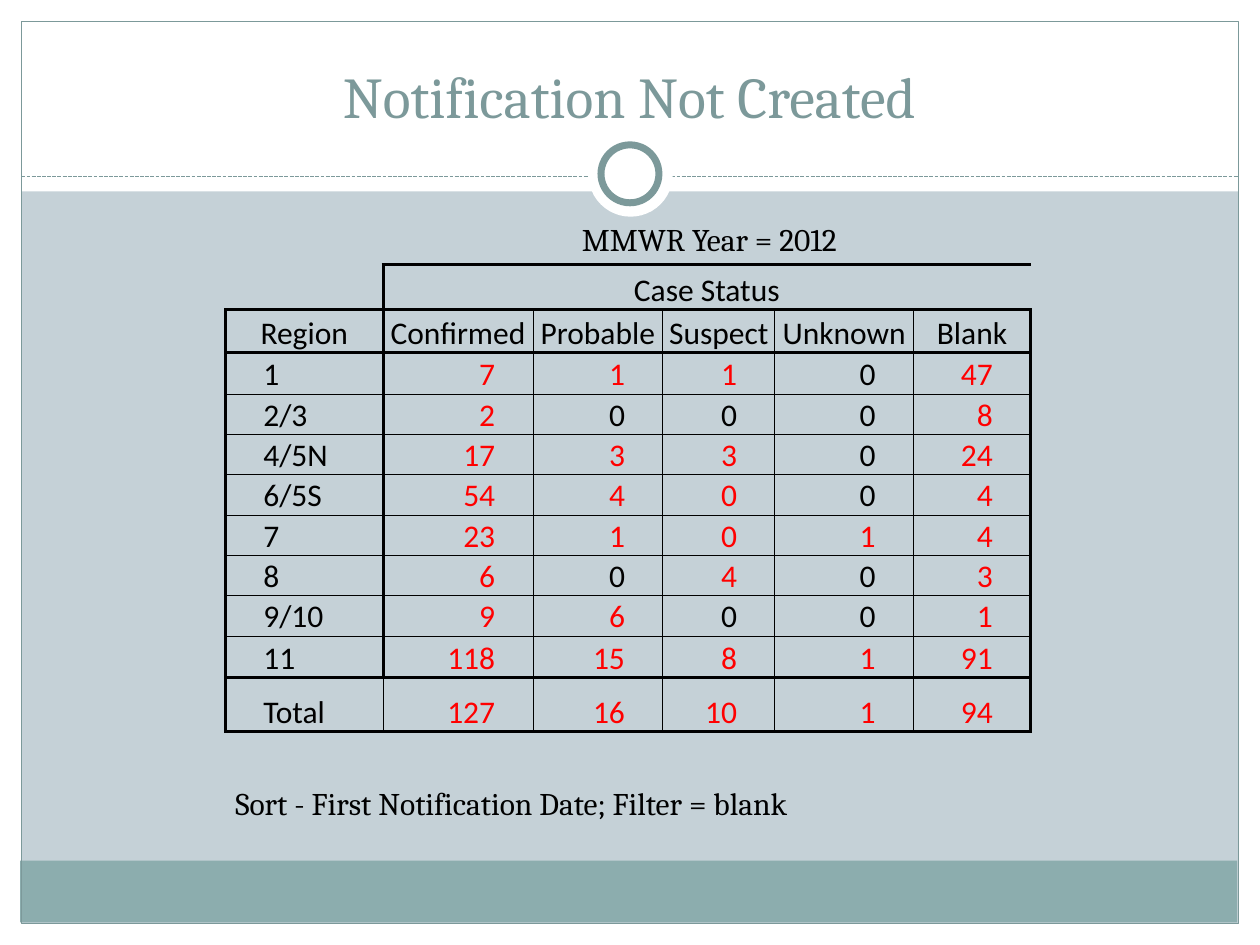
"""Build the 'Notification Not Created' slide with its region by case status table."""
from lxml import etree
from pptx import Presentation
from pptx.dml.color import RGBColor
from pptx.enum import dml, shapes, text
from pptx.oxml import ns
from pptx.util import Inches, Pt

WHITE, TEAL, BAND, BLACK, RED = "FFFFFF", "7C999A", "8CADAE", "000000", "FF0000"
THIN, HEAVY = 0.5, 2


def color(value):
    return RGBColor.from_string(value)


def set_border(cell, side, width):
    properties = cell._tc.get_or_add_tcPr()
    line = etree.SubElement(properties, ns.qn(f"a:ln{side}"), w=str(Pt(width)))
    if not width:
        etree.SubElement(line, ns.qn("a:noFill"))
        return
    fill = etree.SubElement(line, ns.qn("a:solidFill"))
    etree.SubElement(fill, ns.qn("a:srgbClr"), val=BLACK)


presentation = Presentation()
presentation.slide_width, presentation.slide_height = Inches(10), Inches(7.5)
slide = presentation.slides.add_slide(presentation.slide_layouts[6])
slide.background.fill.solid()
slide.background.fill.fore_color.rgb = color("C5D1D7")

rectangle, oval = shapes.MSO_SHAPE.RECTANGLE, shapes.MSO_SHAPE.OVAL
decorations = [
    (rectangle, (0, 7.33, 10, 0.17), WHITE, None),
    (rectangle, (0, 0, 10, 1.52), WHITE, None),
    (rectangle, (0, 0, 0.17, 7.5), WHITE, None),
    (rectangle, (9.83, 0, 0.17, 7.5), WHITE, None),
    (rectangle, (0.16, 6.83, 9.66, 0.49), BAND, None),
    (rectangle, (0.17, 0.17, 9.66, 7.16), None, 0.75),
    (oval, (4.67, 1.05, 0.67, 0.67), WHITE, None),
    (oval, (4.77, 1.15, 0.46, 0.46), WHITE, 4),
]
for preset, box, fill, line_width in decorations:
    if box[:2] == (4.67, 1.05):
        divider = slide.shapes.add_connector(
            shapes.MSO_CONNECTOR.STRAIGHT, Inches(0.17), Inches(1.4), Inches(9.83), Inches(1.4))
        divider.line.color.rgb = color(TEAL)
        divider.line.width = Pt(0.75)
        divider.line.dash_style = dml.MSO_LINE.SQUARE_DOT
        etree.SubElement(divider._element.spPr, ns.qn("a:effectLst"))
    shape = slide.shapes.add_shape(preset, *map(Inches, box))
    shape.shadow.inherit = False
    if fill:
        shape.fill.solid()
        shape.fill.fore_color.rgb = color(fill)
    else:
        shape.fill.background()
    if line_width:
        shape.line.color.rgb = color(TEAL)
        shape.line.width = Pt(line_width)
    else:
        shape.line.fill.background()

left, center, right = text.PP_ALIGN.LEFT, text.PP_ALIGN.CENTER, text.PP_ALIGN.RIGHT
top, bottom = text.MSO_ANCHOR.TOP, text.MSO_ANCHOR.BOTTOM
captions = [
    ("Notification Not Created", (0.33, 0.25, 9.33, 0.83), 33, TEAL, center, bottom),
    ("Sort - First Notification Date; Filter = blank", (1.77, 6.17, 5.57, 0.42), 18, BLACK, left, top),
    ("MMWR Year = 2012", (3.42, 1.7, 4.42, 0.4), 18, BLACK, center, top),
]
for caption, box, size, font_color, alignment, anchor in captions:
    frame = slide.shapes.add_textbox(*map(Inches, box)).text_frame
    frame.word_wrap = True
    frame.vertical_anchor = anchor
    paragraph = frame.paragraphs[0]
    paragraph.text = caption
    paragraph.alignment = alignment
    paragraph.font.name = "Cambria"
    paragraph.font.size = Pt(size)
    paragraph.font.color.rgb = color(font_color)

rows = [
    ["", "Case Status", "", "", "", ""],
    ["Region", "Confirmed", "Probable", "Suspect", "Unknown", "Blank"],
    ["1", "7", "1", "1", "0", "47"],
    ["2/3", "2", "0", "0", "0", "8"],
    ["4/5N", "17", "3", "3", "0", "24"],
    ["6/5S", "54", "4", "0", "0", "4"],
    ["7", "23", "1", "0", "1", "4"],
    ["8", "6", "0", "4", "0", "3"],
    ["9/10", "9", "6", "0", "0", "1"],
    ["11", "118", "15", "8", "1", "91"],
    ["Total", "127", "16", "10", "1", "94"],
]
red_zeros = {("6/5S", 3), ("7", 3)}
column_widths = [1.25, 1.19, 1.03, 0.89, 1.1, 0.93]
row_heights = [0.36, 0.34, 0.33] + [0.32] * 6 + [0.33, 0.43]
total_row = len(rows) - 1
heavy_rows, heavy_columns = {0, 1, 2, total_row, total_row + 1}, {0, 1, 6}

table = slide.shapes.add_table(
    len(rows), len(column_widths), Inches(1.79), Inches(2.1),
    Inches(sum(column_widths)), Inches(sum(row_heights))).table
table.first_row = table.horz_banding = False
for column, width in zip(table.columns, column_widths):
    column.width = Inches(width)
for row, height in zip(table.rows, row_heights):
    row.height = Inches(height)
table.cell(0, 1).merge(table.cell(0, 5))

for r, values in enumerate(rows):
    for c, value in enumerate(values):
        cell = table.cell(r, c)
        is_header, is_label = r < 2, c == 0
        is_red = not is_header and not is_label and (value != "0" or (values[0], c) in red_zeros)
        cell.vertical_anchor = bottom
        cell.margin_left = Inches(0.3 if is_label and not is_header else 0.01)
        cell.margin_right = Inches(0.01 if is_label or is_header else 0.3)
        cell.margin_top, cell.margin_bottom = Inches(0.01), 0
        paragraph = cell.text_frame.paragraphs[0]
        paragraph.text = value
        paragraph.alignment = center if is_header else left if is_label else right
        paragraph.font.name = "Calibri"
        paragraph.font.size = Pt(18)
        paragraph.font.color.rgb = color(RED if is_red else BLACK)

        for side, edge in (("L", c), ("R", c + 1)):
            is_heavy = edge in heavy_columns and not (r == total_row and edge == 1)
            is_open = r == 0 and edge not in (1, 6)
            set_border(cell, side, 0 if is_open else HEAVY if is_heavy else THIN)
        for side, edge in (("T", r), ("B", r + 1)):
            is_open = is_label and edge == 0
            set_border(cell, side, 0 if is_open else HEAVY if edge in heavy_rows else THIN)
        cell.fill.background()

presentation.save("out.pptx")
